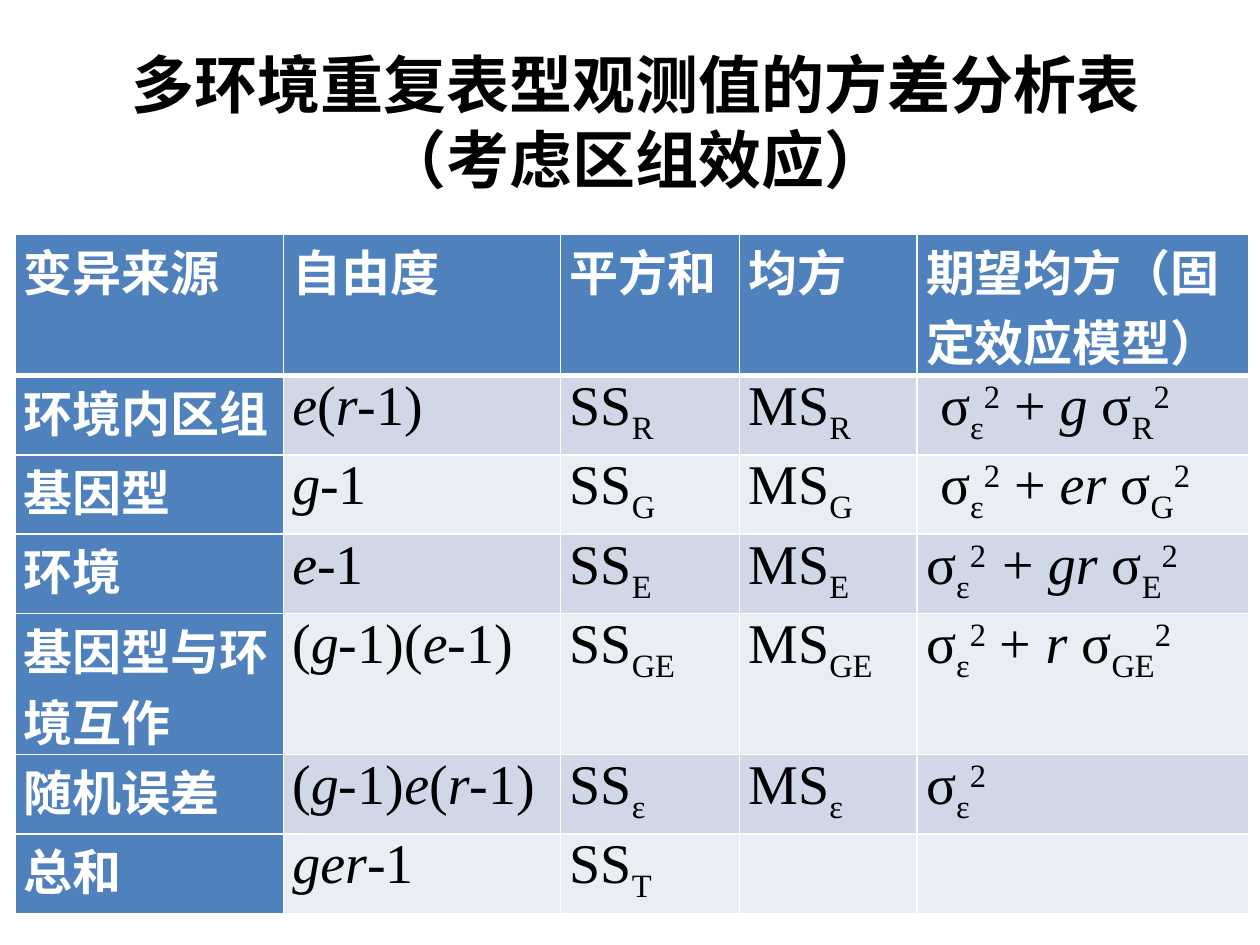
from lxml.etree import SubElement
from pptx import Presentation
from pptx.dml.color import RGBColor
from pptx.enum.text import MSO_ANCHOR, PP_ALIGN
from pptx.oxml.ns import qn
from pptx.util import Inches, Pt

TITLE_LINES = ["多环境重复表型观测值的方差分析表", "（考虑区组效应）"]
HEADERS = ["变异来源", "自由度", "平方和", "均方", "期望均方（固定效应模型）"]
ROWS = [
    ("环境内区组", "*e*(*r*-1)", "SS_R_", "MS_R_", " σ_ε_^2^ + *g *σ_R_^2^"),
    ("基因型", "*g*-1", "SS_G_", "MS_G_", " σ_ε_^2^ + *er *σ_G_^2^"),
    ("环境", "*e*-1", "SS_E_", "MS_E_", "σ_ε_^2  ^+ *gr *σ_E_^2^"),
    ("基因型与环境互作", "(*g*-1)(*e*-1)", "SS_GE_", "MS_GE_", "σ_ε_^2^ + *r *σ_GE_^2^"),
    ("随机误差", "(*g*-1)*e*(*r*-1)", "SS_ε_", "MS_ε_", "σ_ε_^2^"),
    ("总和", "*ger*-1", "SS_T_", "", ""),
]
ITALIC_MARK = "*"
BASELINES = {"_": "-25000", "^": "30000"}

COLUMN_WIDTHS = [2.13, 2.2, 1.42, 1.41, 2.63]
ONE_LINE_HEIGHT, TWO_LINE_HEIGHT = 0.63, 1.12
LABEL_LINE_LENGTH = 5
TABLE_LEFT, TABLE_TOP = 0.12, 1.86

CJK_FONT = "Noto Sans CJK SC"
LATIN_FONT = "Times New Roman"
BLACK = RGBColor(0x00, 0x00, 0x00)
WHITE = RGBColor(0xFF, 0xFF, 0xFF)
BLUE = RGBColor(0x4F, 0x81, 0xBD)
BANDS = [RGBColor(0xD0, 0xD8, 0xE8), RGBColor(0xE9, 0xED, 0xF4)]


def add_run(paragraph, text, latin, size, color, bold):
    run = paragraph.add_run()
    run.text = text
    font = run.font
    font.name, font.size, font.bold = latin, Pt(size), bold
    font.color.rgb = color
    SubElement(run._r.get_or_add_rPr(), qn("a:ea"), typeface=CJK_FONT)
    return run


def split_markup(text):
    style, piece = "", ""
    for character in text:
        if character == ITALIC_MARK or character in BASELINES:
            if piece:
                yield style, piece
            style, piece = ("" if style == character else character), ""
        else:
            piece += character
    if piece:
        yield style, piece


def add_formula(paragraph, text):
    for style, piece in split_markup(text):
        run = add_run(paragraph, piece, LATIN_FONT, 32, BLACK, False)
        run.font.italic = style == ITALIC_MARK
        if style in BASELINES:
            run._r.get_or_add_rPr().set("baseline", BASELINES[style])


def set_borders(cell, top, bottom):
    properties = cell._tc.get_or_add_tcPr()
    widths = {"a:lnL": 1, "a:lnR": 1, "a:lnT": top, "a:lnB": bottom}
    for index, (tag, width) in enumerate(widths.items()):
        line = SubElement(properties, qn(tag), w=str(Pt(width)))
        fill = SubElement(line, qn("a:solidFill"))
        SubElement(fill, qn("a:srgbClr"), val=str(WHITE))
        properties.insert(index, line)


def add_title(slide):
    box = slide.shapes.add_textbox(Inches(0.67), Inches(0.29), Inches(8.74), Inches(1.34))
    frame = box.text_frame
    frame.word_wrap = True
    frame.vertical_anchor = MSO_ANCHOR.MIDDLE
    paragraph = frame.paragraphs[0]
    paragraph.alignment = PP_ALIGN.CENTER
    for index, line in enumerate(TITLE_LINES):
        if index:
            paragraph.add_line_break()
        add_run(paragraph, line, CJK_FONT, 36, BLACK, True)


def add_variance_table(slide):
    heights = [TWO_LINE_HEIGHT] + [
        TWO_LINE_HEIGHT if len(row[0]) > LABEL_LINE_LENGTH else ONE_LINE_HEIGHT
        for row in ROWS
    ]
    table = slide.shapes.add_table(
        len(heights), len(COLUMN_WIDTHS), Inches(TABLE_LEFT), Inches(TABLE_TOP),
        Inches(sum(COLUMN_WIDTHS)), Inches(sum(heights)),
    ).table
    table.first_col = True
    for column, width in zip(table.columns, COLUMN_WIDTHS):
        column.width = Inches(width)
    for row, height in zip(table.rows, heights):
        row.height = Inches(height)

    for row_index, texts in enumerate([HEADERS] + ROWS):
        for column_index, text in enumerate(texts):
            cell = table.cell(row_index, column_index)
            cell.margin_left = cell.margin_right = Inches(0.07)
            cell.margin_top = cell.margin_bottom = 0
            is_label = row_index == 0 or column_index == 0
            cell.fill.solid()
            cell.fill.fore_color.rgb = BLUE if is_label else BANDS[(row_index - 1) % 2]
            set_borders(cell, 3 if row_index == 1 else 1, 3 if row_index == 0 else 1)
            paragraph = cell.text_frame.paragraphs[0]
            if is_label:
                add_run(paragraph, text, LATIN_FONT, 28, WHITE, True)
            else:
                add_formula(paragraph, text)


def main():
    presentation = Presentation()
    presentation.slide_width, presentation.slide_height = Inches(10), Inches(7.5)
    slide = presentation.slides.add_slide(presentation.slide_layouts[6])
    add_title(slide)
    add_variance_table(slide)
    presentation.save("out.pptx")


if __name__ == "__main__":
    main()
